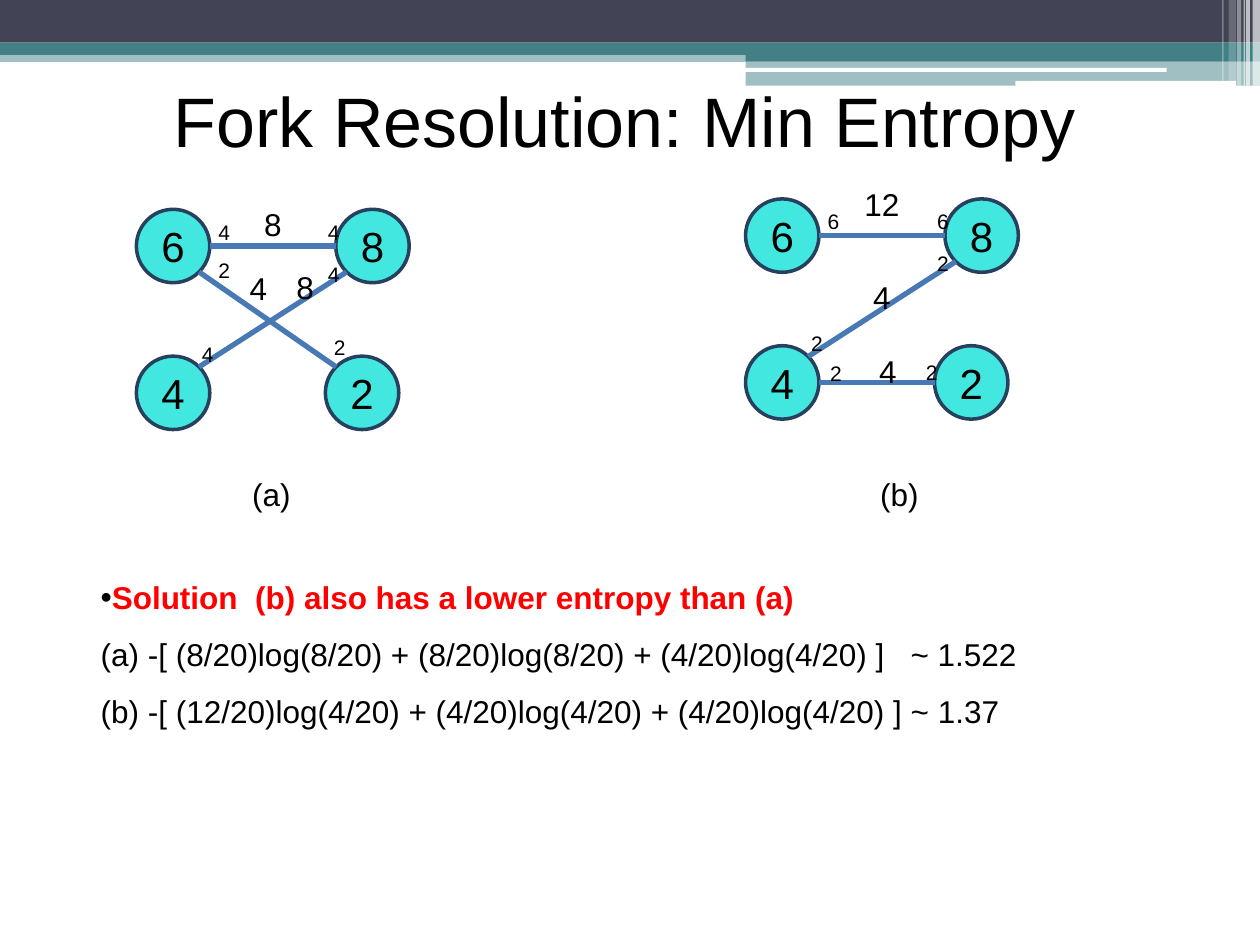
from lxml.etree import SubElement as Sub
from pptx import Presentation
from pptx.dml.color import RGBColor
from pptx.enum.shapes import MSO_CONNECTOR as Link, MSO_SHAPE as Kind
from pptx.enum.text import MSO_ANCHOR as Anchor, PP_ALIGN as Align
from pptx.oxml.ns import qn
from pptx.util import Cm, Pt

FONT = "Arial"
HUE = {"ink": "000000", "alert": "FF0000", "white": "FFFFFF", "navy": "424456",
       "teal": "438086", "node": "42E8E0", "rim": "27405E", "edge": "4879B5"}
BARS = [
    (Kind.RECTANGLE, 0, 1.02, 25.4, 0.23, "teal", 50),
    (Kind.RECTANGLE, 0, 0, 25.4, 0.86, "navy", 100),
    (Kind.RECTANGLE, 0, 0.86, 25.4, 0.25, "teal", 100),
    (Kind.RECTANGLE, 15.03, 0.98, 10.37, 0.25, "teal", 100),
    (Kind.RECTANGLE, 15.03, 1.23, 10.37, 0.5, "teal", 50),
    (Kind.ROUNDED_RECTANGLE, 15.01, 1.37, 8.51, 0.08, "white", 100),
    (Kind.ROUNDED_RECTANGLE, 20.47, 1.63, 4.45, 0.1, "white", 100),
    (Kind.RECTANGLE, 25.25, 0, 0.15, 1.73, "white", 65),
    (Kind.RECTANGLE, 25.12, 0, 0.08, 1.73, "white", 65),
    (Kind.RECTANGLE, 25.07, 0, 0.03, 1.73, "white", 60),
    (Kind.RECTANGLE, 24.94, 0, 0.08, 1.73, "white", 40),
    (Kind.RECTANGLE, 24.77, 0, 0.15, 1.63, "white", 20),
    (Kind.RECTANGLE, 24.64, 0, 0.03, 1.63, "white", 30),
]
TITLE = "Fork Resolution: Min Entropy"
BODY = [
    "Solution  (b) also has a lower entropy than (a)",
    "(a) -[ (8/20)log(8/20) + (8/20)log(8/20) + (4/20)log(4/20) ]   ~ 1.522",
    "(b) -[ (12/20)log(4/20) + (4/20)log(4/20) + (4/20)log(4/20) ] ~ 1.37",
]
SIZE = 1.48
NODES = {"6": (0, 0), "4": (0, 2.96), "8": (4.02, 0), "2": (3.81, 2.96)}
GRAPHS = [
    {"at": (2.75, 4.22),
     "edges": ["68", "62", "48"],
     "flows": [("8", 2.75, -0.22), ("8", 3.4, 1.05), ("4", 2.46, 1.07),
               ("(a)", 2.72, 5.23)],
     "ends": [("4", 1.77, 0.08), ("4", 3.98, 0.08), ("4", 3.98, 0.93),
              ("2", 1.77, 0.84), ("4", 1.44, 2.54), ("2", 4.1, 2.4)]},
    {"at": (15.03, 4.01),
     "edges": ["68", "42", "48"],
     "flows": [("12", 2.75, -0.41), ("4", 2.75, 1.47), ("4", 2.87, 2.96),
               ("(b)", 3.1, 5.45)],
     "ends": [("6", 1.77, 0.06), ("6", 3.98, 0.06), ("2", 3.98, 0.91),
              ("2", 1.82, 3.13), ("2", 1.44, 2.52), ("2", 3.75, 3.11)]},
]


def tint(name):
    return RGBColor.from_string(HUE[name])


def style(para, size, hue="ink", bold=False):
    for run in para.runs:
        font = run.font
        font.name, font.size, font.bold = FONT, Pt(size), bold
        font.color.rgb = tint(hue)


def write(shape, text, size):
    frame = shape.text_frame
    frame.text = text
    para = frame.paragraphs[0]
    para.alignment = Align.CENTER
    style(para, size)
    return frame


def block(kind, x, y, w, h, hue):
    shape = slide.shapes.add_shape(kind, Cm(x), Cm(y), Cm(w), Cm(h))
    shape.shadow.inherit = False
    shape.fill.solid()
    shape.fill.fore_color.rgb = tint(hue)
    return shape


def bar(kind, x, y, w, h, hue, cover):
    shape = block(kind, x, y, w, h, hue)
    shape.line.fill.background()
    if cover < 100:
        color = shape.fill._xPr.find(qn("a:solidFill"))[0]
        Sub(color, qn("a:alpha"), val=str(cover * 1000))


def label(text, mid, top, size):
    wide = 1.27
    box = slide.shapes.add_textbox(Cm(mid - wide / 2), Cm(top), Cm(wide), Cm(size / 18))
    frame = write(box, text, size)
    frame.margin_left = frame.margin_right = 0
    frame.word_wrap = True


def node(text, x, y):
    shape = block(Kind.OVAL, x, y, SIZE, SIZE, "node")
    shape.line.color.rgb = tint("rim")
    shape.line.width = Pt(2)
    frame = write(shape, text, 24)
    frame.vertical_anchor = Anchor.MIDDLE
    frame.word_wrap = False


def edge(start, end):
    rise = (end[1] > start[1]) - (end[1] < start[1])
    reach = SIZE / 2 * (0.5 ** 0.5 if rise else 1)
    half = SIZE / 2
    line = slide.shapes.add_connector(
        Link.STRAIGHT,
        Cm(start[0] + half + reach), Cm(start[1] + half + rise * reach),
        Cm(end[0] + half - reach), Cm(end[1] + half - rise * reach))
    line.line.color.rgb = tint("edge")
    line.line.width = Pt(3)
    Sub(line._element.spPr, qn("a:effectLst"))


def graph(data):
    left, top = data["at"]
    spots = {name: (left + x, top + y) for name, (x, y) in NODES.items()}
    for name, spot in spots.items():
        node(name, *spot)
    for start, end in data["edges"]:
        edge(spots[start], spots[end])
    for key, size in (("flows", 18), ("ends", 12)):
        for text, x, y in data[key]:
            label(text, left + x, top + y, size)


def body():
    box = slide.shapes.add_textbox(Cm(1.27), Cm(11.1), Cm(22.58), Cm(7.92))
    frame = box.text_frame
    frame.word_wrap = True
    frame.margin_left = frame.margin_right = Cm(0.23)
    frame.margin_top, frame.margin_bottom = Cm(0.18), Cm(0.1)
    frame.text = "\n".join(BODY)
    for i, para in enumerate(frame.paragraphs):
        first = i == 0
        para.line_spacing = 1.5
        style(para, 18, "alert" if first else "ink", first)
        props = para._p.get_or_add_pPr()
        margin, indent = (0, 0.53) if first else (1.09, -0.56)
        props.set("marL", str(Cm(margin)))
        props.set("indent", str(Cm(indent)))
        if first:
            Sub(Sub(props, qn("a:buClr")), qn("a:srgbClr"), val=HUE["ink"])
            Sub(props, qn("a:buSzPct"), val="102000")
            Sub(props, qn("a:buFont"), typeface=FONT)
            Sub(props, qn("a:buChar"), char="•")
        else:
            Sub(props, qn("a:buNone"))


deck = Presentation()
deck.slide_width, deck.slide_height = Cm(25.4), Cm(19.05)
slide = deck.slides.add_slide(deck.slide_layouts[6])
for item in BARS:
    bar(*item)
head = slide.shapes.add_textbox(Cm(0.43), Cm(1.47), Cm(24.33), Cm(1.78))
frame = write(head, TITLE, 40)
frame.word_wrap = True
frame.vertical_anchor = Anchor.MIDDLE
frame.margin_left = frame.margin_right = frame.margin_bottom = 0
frame.margin_top = Cm(0.1)
body()
for data in GRAPHS:
    graph(data)
deck.save("out.pptx")
